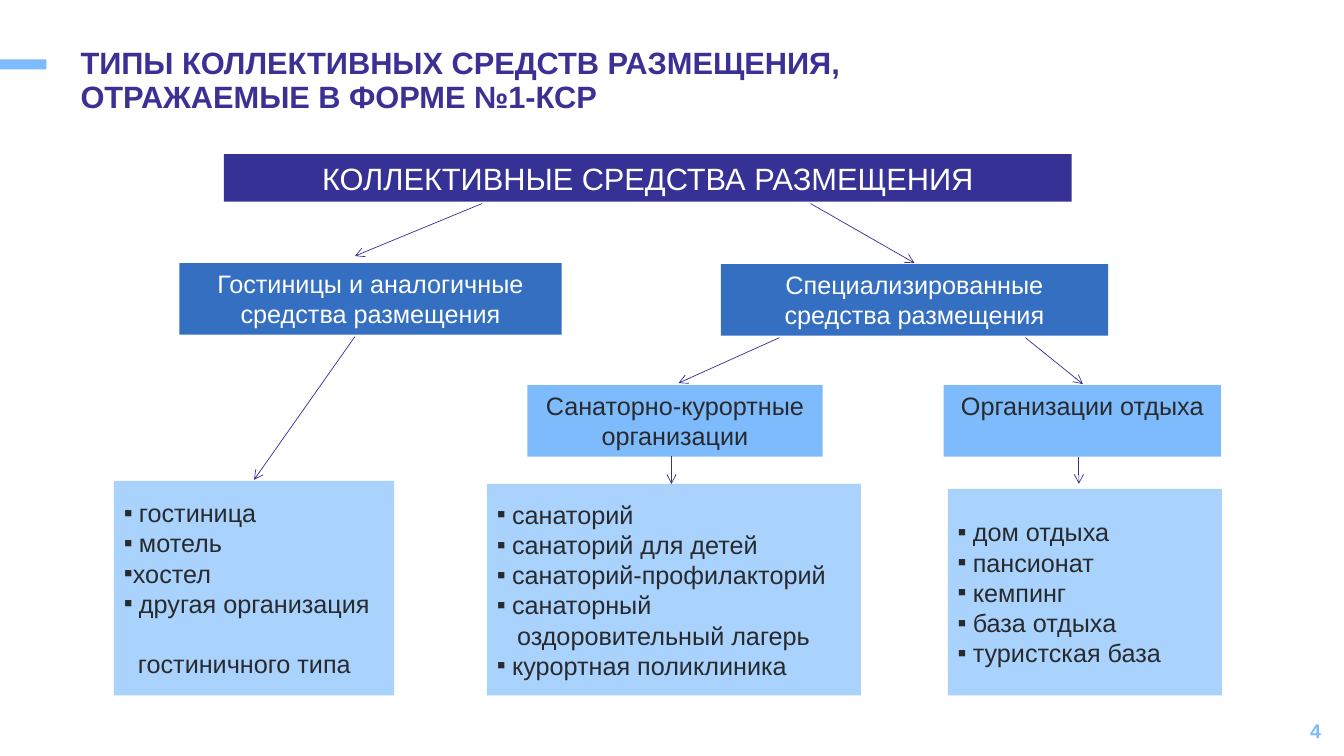
from lxml import etree
from pptx import Presentation
from pptx.dml.color import RGBColor
from pptx.enum.shapes import MSO_CONNECTOR, MSO_SHAPE
from pptx.enum.text import MSO_ANCHOR, PP_ALIGN
from pptx.oxml.ns import qn
from pptx.util import Inches, Pt

RECTANGLE = MSO_SHAPE.RECTANGLE
STRAIGHT = MSO_CONNECTOR.STRAIGHT
TOP, MIDDLE, BOTTOM = MSO_ANCHOR.TOP, MSO_ANCHOR.MIDDLE, MSO_ANCHOR.BOTTOM
LEFT, CENTER, RIGHT = PP_ALIGN.LEFT, PP_ALIGN.CENTER, PP_ALIGN.RIGHT

INDIGO = RGBColor(0x36, 0x31, 0x94)
TITLE_INDIGO = RGBColor(0x3B, 0x31, 0x94)
BLUE = RGBColor(0x34, 0x6F, 0xC2)
SKY = RGBColor(0x7D, 0xBB, 0xFC)
PALE = RGBColor(0xA9, 0xD3, 0xFD)
WHITE = RGBColor(0xFF, 0xFF, 0xFF)
INK = RGBColor(0x28, 0x2A, 0x2E)

BULLET = "▪"
BULLET_INDENT = 0.15


def write_text(paragraph, text, size=18, color=INK, bold=False, align=LEFT,
               line_spacing=None, indent=0, bullet=None):
    paragraph.alignment = align
    if line_spacing:
        paragraph.line_spacing = line_spacing
    properties = paragraph._p.get_or_add_pPr()
    if indent:
        properties.set("marL", str(Inches(indent)))
        properties.set("indent", str(-Inches(indent) if bullet else 0))
    if bullet:
        etree.SubElement(properties, qn("a:buFont"), typeface="Arial")
        etree.SubElement(properties, qn("a:buChar"), char=bullet)
    run = paragraph.add_run()
    run.text = text
    run.font.name = "Arial"
    run.font.size = Pt(size)
    run.font.bold = bold
    run.font.color.rgb = color


class DiagramSlide:
    def __init__(self, presentation):
        self.shapes = presentation.slides.add_slide(presentation.slide_layouts[6]).shapes

    def label(self, bounds, text, anchor=TOP, **text_format):
        frame = self.shapes.add_textbox(*map(Inches, bounds)).text_frame
        frame.word_wrap = True
        frame.vertical_anchor = anchor
        write_text(frame.paragraphs[0], text, **text_format)

    def block(self, bounds, fill, anchor=TOP):
        shape = self.shapes.add_shape(RECTANGLE, *map(Inches, bounds))
        shape.shadow.inherit = False
        shape.fill.solid()
        shape.fill.fore_color.rgb = fill
        shape.line.fill.background()
        shape.text_frame.word_wrap = True
        shape.text_frame.vertical_anchor = anchor
        return shape.text_frame

    def category(self, bounds, fill, text, anchor=TOP, **text_format):
        frame = self.block(bounds, fill, anchor)
        write_text(frame.paragraphs[0], text, align=CENTER, **text_format)

    def listing(self, bounds, items):
        """Each item is a text, bullet, indent and space before in points."""
        frame = self.block(bounds, PALE, MIDDLE)
        for index, (text, bullet, indent, space_before) in enumerate(items):
            paragraph = frame.add_paragraph() if index else frame.paragraphs[0]
            if space_before:
                paragraph.space_before = Pt(space_before)
            write_text(paragraph, text, bullet=bullet, indent=indent)

    def arrow(self, start, end):
        connector = self.shapes.add_connector(STRAIGHT, *map(Inches, start + end))
        connector.line.color.rgb = INDIGO
        connector.line.width = Pt(0.5)
        etree.SubElement(connector.line._get_or_add_ln(), qn("a:tailEnd"), type="arrow")
        etree.SubElement(connector._element.spPr, qn("a:effectLst"))


def bulleted(*texts):
    return [(text, BULLET, BULLET_INDENT, 0) for text in texts]


def main():
    presentation = Presentation()
    presentation.slide_width = Inches(13.33)
    presentation.slide_height = Inches(7.5)
    slide = DiagramSlide(presentation)

    slide.block((0, 0.59, 0.46, 0.1), SKY)
    slide.label((10.2, 7.05, 3, 0.4), "4", anchor=MIDDLE, size=14, color=SKY,
                bold=True, align=RIGHT)
    slide.label((0.7, 0.43, 8.62, 0.75),
                "ТИПЫ КОЛЛЕКТИВНЫХ СРЕДСТВ РАЗМЕЩЕНИЯ, ОТРАЖАЕМЫЕ В ФОРМЕ №1-КСР",
                size=22, color=TITLE_INDIGO, bold=True, line_spacing=0.9)

    slide.category((2.22, 1.53, 8.41, 0.47), INDIGO, "КОЛЛЕКТИВНЫЕ СРЕДСТВА РАЗМЕЩЕНИЯ",
                   anchor=BOTTOM, size=22, color=WHITE)
    slide.category((1.78, 2.61, 3.79, 0.71), BLUE,
                   "Гостиницы и аналогичные средства размещения", color=WHITE)
    slide.category((7.15, 2.62, 3.84, 0.71), BLUE,
                   "Специализированные средства размещения", color=WHITE)
    slide.category((5.23, 3.82, 2.93, 0.71), SKY, "Санаторно-курортные организации")
    slide.category((9.36, 3.82, 2.75, 0.71), SKY, "Организации отдыха")

    slide.listing((1.13, 4.77, 2.78, 2.13), [
        *bulleted("гостиница", "мотель"),
        ("хостел", BULLET, 0.09, 0),
        *bulleted("другая организация"),
        ("гостиничного типа", None, 0.14, 21.6),
    ])
    slide.listing((4.83, 4.8, 3.71, 2.1), [
        *bulleted("санаторий", "санаторий для детей", "санаторий-профилакторий",
                  "санаторный"),
        ("оздоровительный лагерь", None, 0.2, 0),
        *bulleted("курортная поликлиника"),
    ])
    slide.listing((9.4, 4.85, 2.72, 2.05), bulleted(
        "дом отдыха", "пансионат", "кемпинг", "база отдыха", "туристская база"))

    for start, end in (
        ((4.78, 2.02), (3.52, 2.54)),
        ((8.04, 2.02), (9.07, 2.61)),
        ((10.17, 3.35), (10.74, 3.81)),
        ((7.73, 3.35), (6.73, 3.8)),
        ((3.52, 3.34), (2.52, 4.76)),
        ((6.66, 4.52), (6.66, 4.8)),
        ((10.7, 4.53), (10.7, 4.8)),
    ):
        slide.arrow(start, end)

    presentation.save("out.pptx")


if __name__ == "__main__":
    main()
